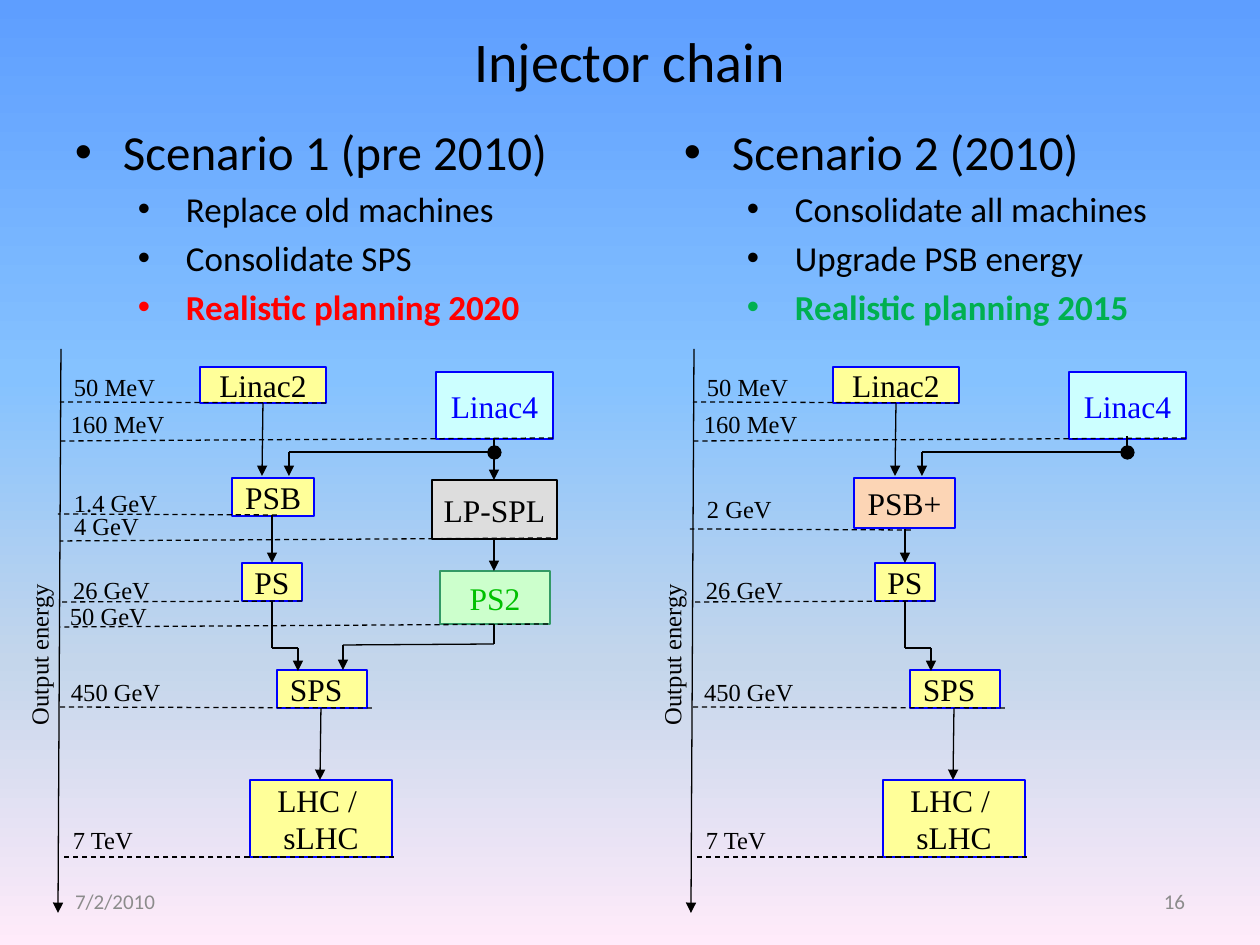
"""Build the injector chain slide: two scenarios with their energy diagrams."""
import copy

import pptx
import pptx.dml.color
import pptx.enum.dml
import pptx.enum.shapes
import pptx.enum.text
import pptx.oxml.ns
import pptx.util

qn = pptx.oxml.ns.qn
ALIGN = pptx.enum.text.PP_ALIGN
SHAPES = pptx.enum.shapes.MSO_SHAPE
MIDDLE = pptx.enum.text.MSO_ANCHOR.MIDDLE
TOP = pptx.enum.text.MSO_ANCHOR.TOP
SCALE = 914400 / 126
SANS, SERIF = "Calibri", "Times New Roman"
BLACK, BLUE, YELLOW, GREY = "000000", "0000FF", "FFFF99", "8C8C8C"
INSET = (12, 6)
DIAGRAM_PITCH = 633

TITLE = "Injector chain"
FOOTERS = [("7/2/2010", 63, ALIGN.LEFT), ("16", 903, ALIGN.RIGHT)]
SKY = [(0, "5E9EFF"), (0.4, "85C2FF"), (0.7, "C4D6EB"), (1, "FFEBFA")]

# machines: text, (left, top, width, height), fill, line, font colour
# levels: text, (left, top, width), dashed line from, to
# links: corner points, arrowhead at the end
SHARED = {
    "machines": [
        ("Linac2", (200, 367, 126, 36), YELLOW, BLUE, BLACK),
        ("Linac4", (436, 372, 117, 67), "CCFFFF", BLUE, BLUE),
        ("PS", (242, 563, 60, 38), YELLOW, BLUE, BLACK),
        ("SPS", (277, 670, 90, 38), YELLOW, BLUE, BLACK),
        ("LHC / \nsLHC", (250, 780, 142, 77), YELLOW, BLUE, BLACK),
    ],
    "levels": [
        ("50 MeV", (62, 366, 112), (326, 403), (60, 402)),
        ("160 MeV", (59, 403, 123), (553, 438), (60, 441)),
        ("26 GeV", (61, 569, 110), (302, 601), (60, 602)),
        ("450 GeV", (59, 671, 120), (372, 708), (60, 707)),
        ("7 TeV", (61, 819, 90), (394, 857), (61, 857)),
    ],
    "links": [
        ([(61, 349), (58, 913)], True),
        ([(263, 403), (262, 476)], True),
        ([(494, 452), (289, 452), (289, 476)], True),
        ([(272, 601), (272, 648), (298, 648), (298, 671)], True),
        ([(321, 708), (320, 780)], True),
    ],
}
SCENARIOS = [
    {
        "left": 63,
        "points": ["Scenario 1 (pre 2010)", "Replace old machines",
                   "Consolidate SPS", "Realistic planning 2020"],
        "accent": "FF0000",
        "machines": [
            ("PSB", (232, 478, 82, 38), YELLOW, BLUE, BLACK),
            ("LP-SPL", (432, 480, 125, 59), "DDDDDD", BLACK, BLACK),
            ("PS2", (440, 571, 110, 53), "CCFFCC", "339966", "00C000"),
        ],
        "levels": [
            ("1.4 GeV", (62, 482, 114), (277, 515), (58, 514)),
            ("4 GeV", (62, 505, 96), (551, 538), (60, 541)),
            ("50 GeV", (58, 595, 110), (548, 624), (60, 627)),
        ],
        "links": [
            ([(272, 515), (272, 563)], True),
            ([(494, 438), (494, 480)], True),
            ([(494, 539), (494, 571)], True),
            ([(494, 624), (494, 644), (343, 645), (343, 670)], True),
        ],
    },
    {
        "left": 672,
        "points": ["Scenario 2 (2010)", "Consolidate all machines",
                   "Upgrade PSB energy", "Realistic planning 2015"],
        "accent": "00B050",
        "machines": [("PSB+", (221, 478, 101, 50), "FCD5B5", BLUE, BLACK)],
        "levels": [("2 GeV", (62, 488, 96), (278, 530), (57, 529))],
        "links": [
            ([(272, 529), (272, 563)], True),
            ([(494, 436), (494, 456)], False),
        ],
    },
]


def px(*lengths):
    return [pptx.util.Emu(round(length * SCALE)) for length in lengths]


def color(code):
    return pptx.dml.color.RGBColor.from_string(code)


def style(paragraph, size, font, code, bold=False):
    for run in paragraph.runs:
        run.font.size = pptx.util.Pt(size)
        run.font.name = font
        run.font.bold = bold
        run.font.color.rgb = color(code)


def write(shape, text, size, font, code, align=ALIGN.LEFT, anchor=TOP, inset=INSET):
    frame = shape.text_frame
    frame.word_wrap = True
    frame.vertical_anchor = anchor
    frame.margin_left, frame.margin_top = px(*inset)
    frame.margin_right, frame.margin_bottom = px(*inset)
    frame.text = text
    for paragraph in frame.paragraphs:
        paragraph.alignment = align
        style(paragraph, size, font, code)


def add_filled(slide, preset, box, fill, line):
    shape = slide.shapes.add_shape(preset, *px(*box))
    shape.shadow.inherit = False
    shape.fill.solid()
    shape.fill.fore_color.rgb = color(fill)
    shape.line.color.rgb = color(line)
    shape.line.width = pptx.util.Pt(0.75)
    return shape


def add_line(slide, start, end, arrow=False, dashed=False):
    line = slide.shapes.add_connector(
        pptx.enum.shapes.MSO_CONNECTOR.STRAIGHT, *px(*start, *end))
    line.line.color.rgb = color(BLACK)
    line.line.width = pptx.util.Pt(0.75)
    if dashed:
        line.line.dash_style = pptx.enum.dml.MSO_LINE.DASH
    properties = line.element.spPr
    if arrow:
        outline = properties.find(qn("a:ln"))
        outline.append(outline.makeelement(qn("a:tailEnd"), {"type": "triangle"}))
    properties.append(properties.makeelement(qn("a:effectLst"), {}))


def add_points(slide, scenario):
    box = slide.shapes.add_textbox(*px(scenario["left"], 116, 557, 210))
    write(box, "\n".join(scenario["points"]), 20, SANS, BLACK)
    paragraphs = box.text_frame.paragraphs
    style(paragraphs[0], 28, SANS, BLACK)
    style(paragraphs[-1], 20, SANS, scenario["accent"], bold=True)
    for index, paragraph in enumerate(paragraphs):
        paragraph.level = min(index, 1)
        paragraph.space_before = pptx.util.Pt(4 if index else 5.6)
        margin, indent = px(111 if index else 48, -48)
        properties = paragraph._p.get_or_add_pPr()
        properties.set("marL", str(margin))
        properties.set("indent", str(indent))
        properties.append(properties.makeelement(qn("a:buFont"), {"typeface": "Arial"}))
        properties.append(properties.makeelement(qn("a:buChar"), {"char": "•"}))


def add_diagram(slide, scenario, shift):
    parts = {key: SHARED[key] + scenario[key] for key in SHARED}
    for name, (left, top, width, height), fill, line, code in parts["machines"]:
        machine = add_filled(slide, SHAPES.RECTANGLE,
                             (left + shift, top, width, height), fill, line)
        if name == "SPS":
            write(machine, name, 18, SERIF, code, ALIGN.LEFT, MIDDLE, (13, 0))
        else:
            write(machine, name, 18, SERIF, code, ALIGN.CENTER, MIDDLE, (6, 0))
    for energy, (left, top, width), start, end in parts["levels"]:
        label = slide.shapes.add_textbox(*px(left + shift, top, width, 42))
        write(label, energy, 14, SERIF, BLACK)
        add_line(slide, (start[0] + shift, start[1]), (end[0] + shift, end[1]), dashed=True)
    for corners, arrow in parts["links"]:
        points = [(x + shift, y) for x, y in corners]
        for index in range(1, len(points)):
            last = index == len(points) - 1
            add_line(slide, points[index - 1], points[index], arrow and last)
    add_filled(slide, SHAPES.OVAL, (488 + shift, 446, 13, 13), BLACK, BLACK)
    axis_label = slide.shapes.add_textbox(*px(shift - 73, 604, 224, 42))
    axis_label.rotation = 270
    write(axis_label, "Output energy", 14, SERIF, BLACK)


def paint_sky(slide):
    fill = slide.background.fill
    fill.gradient()
    fill.gradient_angle = 270
    stop_list = slide.element.find(".//" + qn("a:gsLst"))
    while len(stop_list) < len(SKY):
        stop_list.append(copy.deepcopy(stop_list[0]))
    for stop, (position, code) in zip(fill.gradient_stops, SKY):
        stop.position = position
        stop.color.rgb = color(code)


def main():
    deck = pptx.Presentation()
    deck.slide_width, deck.slide_height = px(1260, 945)
    slide = deck.slides.add_slide(deck.slide_layouts[5])
    paint_sky(slide)
    title = slide.shapes.title
    title.left, title.top, title.width, title.height = px(63, 21, 1134, 78)
    write(title, TITLE, 32, SANS, BLACK, ALIGN.CENTER, MIDDLE)
    for text, left, align in FOOTERS:
        footer = slide.shapes.add_textbox(*px(left, 876, 294, 50))
        write(footer, text, 12, SANS, GREY, align, MIDDLE)
    for index, scenario in enumerate(SCENARIOS):
        add_diagram(slide, scenario, index * DIAGRAM_PITCH)
        add_points(slide, scenario)
    deck.save("out.pptx")


if __name__ == "__main__":
    main()
